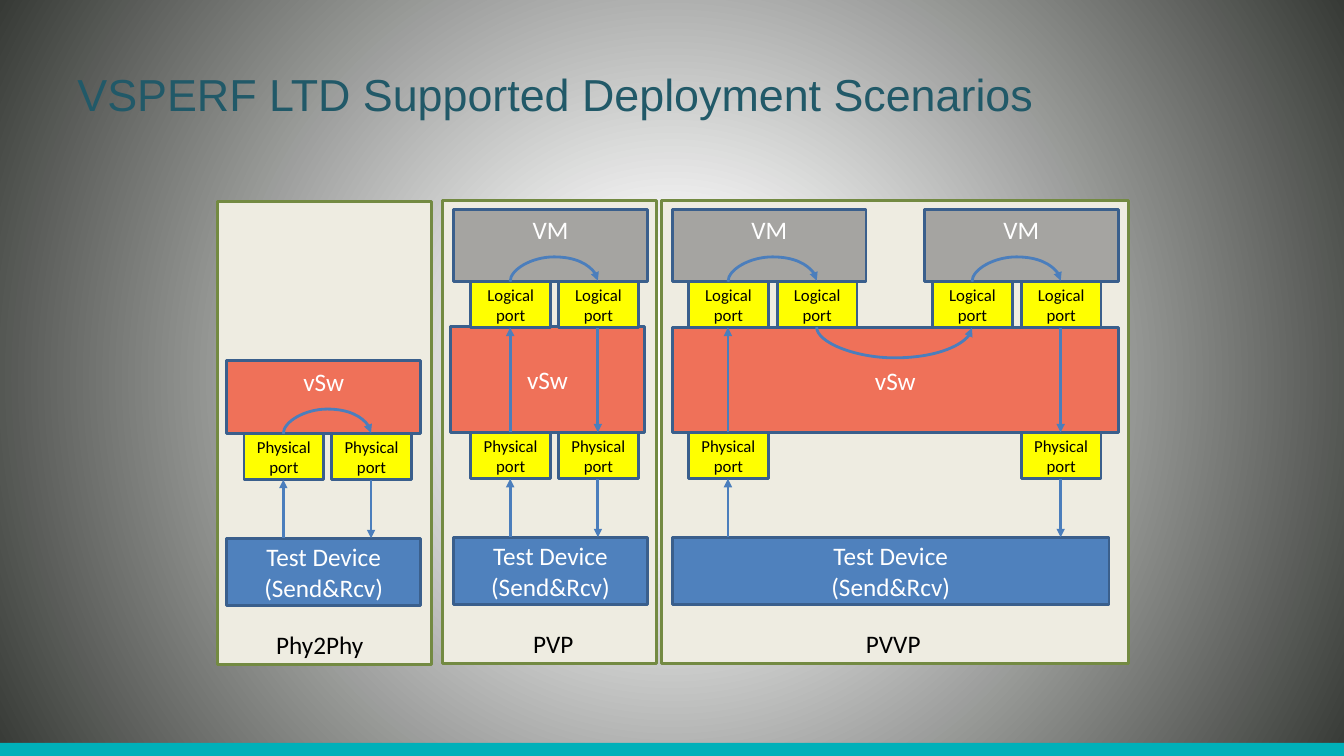
import pptx
import pptx.util
import pptx.dml.color
import pptx.enum.shapes
import pptx.enum.text
import pptx.oxml
import pptx.oxml.ns
import lxml.etree

PX = 9144
PORT_WIDTH, PORT_HEIGHT = 79, 46
PORT_MIDDLE = 39
VM_WIDTH, VM_HEIGHT = 192, 71
VM_TOP, LOGICAL_TOP, PHYSICAL_TOP = 9, 80, 230
TEST_TOP, TEST_HEIGHT, CAPTION_TOP = 334, 67, 419
OUTLINE, ARROW = "3A5F8C", "4B7EBC"
TOP = pptx.enum.text.MSO_ANCHOR.TOP
MIDDLE = pptx.enum.text.MSO_ANCHOR.MIDDLE
LEFT = pptx.enum.text.PP_ALIGN.LEFT
CENTER = pptx.enum.text.PP_ALIGN.CENTER
qn = pptx.oxml.ns.qn


def px(length):
    return pptx.util.Emu(round(length * PX))


def color(value):
    return pptx.dml.color.RGBColor.from_string(value)


def write(shape, text, size, font_color, font_name="Calibri", alignment=CENTER, anchor=MIDDLE):
    frame = shape.text_frame
    frame.word_wrap = True
    frame.vertical_anchor = anchor
    frame.text = text
    for paragraph in frame.paragraphs:
        paragraph.alignment = alignment
        for run in paragraph.runs:
            run.font.size = pptx.util.Pt(size)
            run.font.name = font_name
            run.font.color.rgb = color(font_color)


def add_label(slide, left, top, width, height, text, size, font_color, **style):
    label = slide.shapes.add_textbox(px(left), px(top), px(width), px(height))
    write(label, text, size, font_color, alignment=LEFT, **style)


def add_box(slide, left, top, width, height, fill, outline=None, opacity=100):
    box = slide.shapes.add_shape(
        pptx.enum.shapes.MSO_SHAPE.RECTANGLE, px(left), px(top), px(width), px(height))
    box.shadow.inherit = False
    box.fill.solid()
    box.fill.fore_color.rgb = color(fill)
    if opacity < 100:
        fill_color = box._element.spPr.find(qn("a:solidFill"))[0]
        lxml.etree.SubElement(fill_color, qn("a:alpha"), val=str(opacity * 1000))
    if outline:
        box.line.color.rgb = color(outline)
        box.line.width = pptx.util.Pt(2)
    else:
        box.line.fill.background()
    return box


def add_arrow(slide, kind, start, end):
    arrow = slide.shapes.add_connector(kind, *map(px, start + end))
    arrow.line.color.rgb = color(ARROW)
    arrow.line.width = pptx.util.Pt(2)
    line = arrow._element.spPr.find(qn("a:ln"))
    lxml.etree.SubElement(line, qn("a:tailEnd"), type="triangle")
    lxml.etree.SubElement(arrow._element.spPr, qn("a:effectLst"))
    return arrow


def add_straight_arrow(slide, x, start_y, end_y):
    add_arrow(slide, pptx.enum.shapes.MSO_CONNECTOR.STRAIGHT, (x, start_y), (x, end_y))


def add_loop(slide, start_x, end_x, y, depth, upward=True):
    span = end_x - start_x
    middle = (start_x + end_x) / 2
    loop = add_arrow(slide, pptx.enum.shapes.MSO_CONNECTOR.CURVE,
                     (middle - 0.5, y - span / 2), (middle + 0.5, y + span / 2))
    transform = loop._element.spPr.find(qn("a:xfrm"))
    transform.set("rot", str((90 if upward else 270) * 60000))
    transform.set("flipH", "1")
    if upward:
        transform.set("flipV", "1")
    adjustments = loop._element.spPr.find(qn("a:prstGeom")).find(qn("a:avLst"))
    lxml.etree.SubElement(adjustments, qn("a:gd"), name="adj1", fmla=f"val {depth * 100000}")


def add_ports(slide, kind, lefts, top):
    for left in lefts:
        port = add_box(slide, left, top, PORT_WIDTH, PORT_HEIGHT, "FFFF00", OUTLINE)
        write(port, f"{kind}\nport", 12, "000000")


def add_scenario(slide, left, top, width, height, caption, caption_box, switch_box,
                 test_box, physical, logical=(), machines=()):
    add_box(slide, left, top, width, height, "EEECE1", "738A42")
    caption_left, caption_width = caption_box
    add_label(slide, left + caption_left, top + CAPTION_TOP, caption_width, 40,
              caption, 18, "000000")

    for machine_left in machines:
        machine = add_box(slide, left + machine_left, top + VM_TOP, VM_WIDTH, VM_HEIGHT,
                          "808080", OUTLINE, 66)
        write(machine, "VM", 18, "FFFFFF", anchor=TOP)

    test_left, test_width = test_box
    device = add_box(slide, left + test_left, top + TEST_TOP, test_width, TEST_HEIGHT,
                     "4F81BD", OUTLINE)
    write(device, "Test Device\n(Send&Rcv)", 18, "FFFFFF")

    switch_left, switch_top, switch_width = switch_box
    switch = add_box(slide, left + switch_left, top + switch_top, switch_width,
                     PHYSICAL_TOP - switch_top, "F03214", OUTLINE, 66)
    write(switch, "vSw", 18, "FFFFFF", anchor=MIDDLE if logical else TOP)

    add_ports(slide, "Physical", [left + x for x in physical], top + PHYSICAL_TOP)
    add_ports(slide, "Logical", [left + x for x in logical], top + LOGICAL_TOP)

    send_x, receive_x = [left + x + PORT_MIDDLE for x in physical]
    spans = [(PHYSICAL_TOP + PORT_HEIGHT, TEST_TOP)]
    if logical:
        spans.append((LOGICAL_TOP + PORT_HEIGHT, PHYSICAL_TOP))
    for upper, lower in spans:
        add_straight_arrow(slide, send_x, top + lower, top + upper)
        add_straight_arrow(slide, receive_x, top + upper, top + lower)

    loop_top = top + (LOGICAL_TOP if logical else PHYSICAL_TOP)
    centers = [left + x + PORT_MIDDLE for x in logical or physical]
    for start_x, end_x in zip(centers[::2], centers[1::2]):
        add_loop(slide, start_x, end_x, loop_top, 25)
    for start_x, end_x in zip(centers[1::2], centers[2::2]):
        add_loop(slide, start_x, end_x, loop_top + PORT_HEIGHT, 31, upward=False)


def set_background(slide):
    fill = slide.background.fill
    fill.gradient()
    for stop, position, value in zip(fill.gradient_stops, (0.15, 1), ("FFFFFF", "373A36")):
        stop.position = position
        stop.color.rgb = color(value)
    gradient = next(slide._element.iter(qn("a:gradFill")))
    gradient.remove(gradient.find(qn("a:lin")))
    circle = lxml.etree.SubElement(gradient, qn("a:path"), path="circle")
    lxml.etree.SubElement(circle, qn("a:fillToRect"), l="50000", t="50000", r="50000", b="50000")


def add_frame(slide, width, height):
    set_background(slide)
    add_box(slide, 0, height - 13, width, 13, "00B0B9")
    add_label(slide, 67, 30, 1200, 125, "VSPERF LTD Supported Deployment Scenarios",
              32, "215968", font_name="Arial")


def main():
    presentation = pptx.Presentation()
    width, height = 1333, 750
    presentation.slide_width, presentation.slide_height = px(width), px(height)
    slide = presentation.slides.add_slide(presentation.slide_layouts[6])
    add_frame(slide, width, height)
    add_scenario(slide, 656, 199, 463, 459, "PVVP", (193, 79), (11, 126, 442), (11, 433),
                 physical=(27, 357), logical=(27, 115, 269, 357), machines=(11, 261))
    add_scenario(slide, 439, 199, 212, 459, "PVP", (80, 64), (8, 125, 192), (11, 192),
                 physical=(28, 115), logical=(28, 115), machines=(11,))
    add_scenario(slide, 216, 200, 212, 459, "Phy2Phy", (48, 115), (9, 158, 192), (9, 192),
                 physical=(26, 113))
    presentation.save("out.pptx")


if __name__ == "__main__":
    main()
